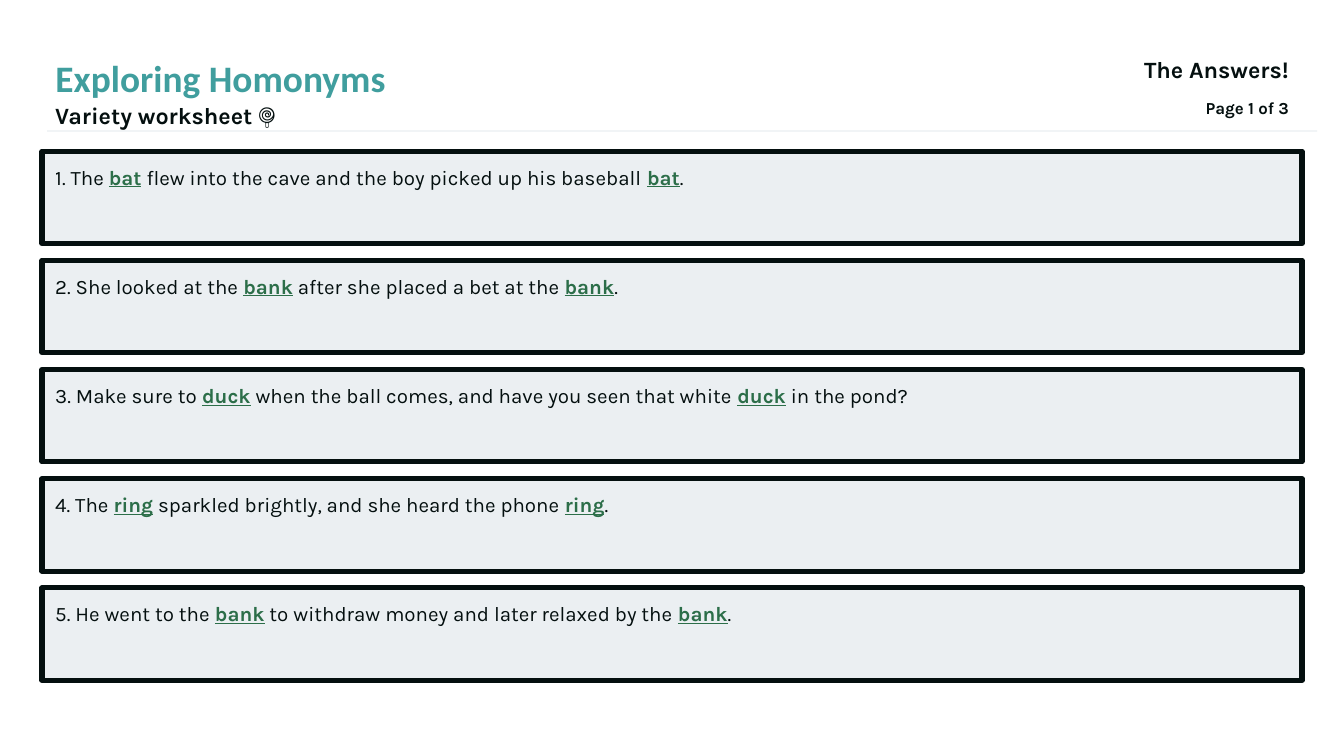
from pptx import Presentation
from pptx.dml.color import RGBColor
from pptx.enum.shapes import MSO_SHAPE as SHAPE
from pptx.enum.text import MSO_ANCHOR as ANCHOR, MSO_AUTO_SIZE as FIT, PP_ALIGN as ALIGN
from pptx.util import Pt

INK = RGBColor(0x04, 0x0F, 0x0F)
TEAL = RGBColor(0x40, 0x9E, 0x9E)
GREEN = RGBColor(0x2C, 0x6E, 0x49)
PALE = RGBColor(0xEB, 0xEF, 0xF2)

TITLE = dict(name="Calibri", size=Pt(20), bold=True, color=TEAL)
HEADING = dict(name="Karla", size=Pt(12.5), bold=True, color=INK)
PAGE = dict(HEADING, size=Pt(9))
BODY = dict(name="Karla", size=Pt(11), bold=False, underline=False, color=INK)
ANSWER = dict(BODY, bold=True, underline=True, color=GREEN)

SENTENCES = [
    "The *bat* flew into the cave and the boy picked up his baseball *bat*.",
    "She looked at the *bank* after she placed a bet at the *bank*.",
    "Make sure to *duck* when the ball comes, and have you seen that white *duck* in the pond?",
    "The *ring* sparkled brightly, and she heard the phone *ring*.",
    "He went to the *bank* to withdraw money and later relaxed by the *bank*.",
]


def write(sp, runs, align=ALIGN.LEFT):
    tf = sp.text_frame
    frame = dict(word_wrap=True, auto_size=FIT.NONE, vertical_anchor=ANCHOR.TOP)
    for side in ("left", "top", "right", "bottom"):
        frame[f"margin_{side}"] = Pt(7.2)
    for key, value in frame.items():
        setattr(tf, key, value)
    p = tf.paragraphs[0]
    p.alignment = align
    for text, style in runs:
        r = p.add_run()
        r.text = text
        for key, value in style.items():
            if key == "color":
                r.font.color.rgb = value
            else:
                setattr(r.font, key, value)


def add_rect(s, left, top, width, height):
    sp = s.shapes.add_shape(SHAPE.RECTANGLE, Pt(left), Pt(top), Pt(width), Pt(height))
    sp.shadow.inherit = False
    sp.fill.solid()
    sp.fill.fore_color.rgb = PALE
    sp.line.fill.background()
    return sp


def add_header(s, left, top, width, height):
    right = left + width
    add_rect(s, left + 2.7, top + 47.3, 680.4, 0.72)

    title = s.shapes.title
    box = dict(left=left, top=top, width=width, height=height)
    for key, value in box.items():
        setattr(title, key, Pt(value))
    write(title, [("Exploring Homonyms", TITLE)])

    labels = [
        ("Variety worksheet 🍭", HEADING, left, 24.4, 450, ALIGN.LEFT),
        ("Page 1 of 3", PAGE, right - 90, 22.5, 90, ALIGN.RIGHT),
        ("The Answers!", HEADING, right - 112.5, 0, 112.5, ALIGN.RIGHT),
    ]
    for text, style, x, dy, w, align in labels:
        label = s.shapes.add_textbox(Pt(x), Pt(top + dy), Pt(w), Pt(height))
        write(label, [(text, style)], align)


def add_answers(s, left, top, width, height, gap=9):
    row = (height - gap * (len(SENTENCES) - 1)) / len(SENTENCES)
    for i, sentence in enumerate(SENTENCES):
        sp = add_rect(s, left, top + i * (row + gap), width, row)
        sp.line.color.rgb = INK
        sp.line.width = Pt(2.7)
        parts = f"{i + 1}. {sentence}".split("*")
        write(sp, [(part, ANSWER if n % 2 else BODY) for n, part in enumerate(parts)])


def main():
    prs = Presentation()
    prs.slide_width, prs.slide_height = Pt(720), Pt(405)
    s = prs.slides.add_slide(prs.slide_layouts[5])
    add_header(s, 22.5, 22.5, 675, 90)
    add_answers(s, 22.5, 81, 675, 283.5)
    prs.save("out.pptx")


if __name__ == "__main__":
    main()
